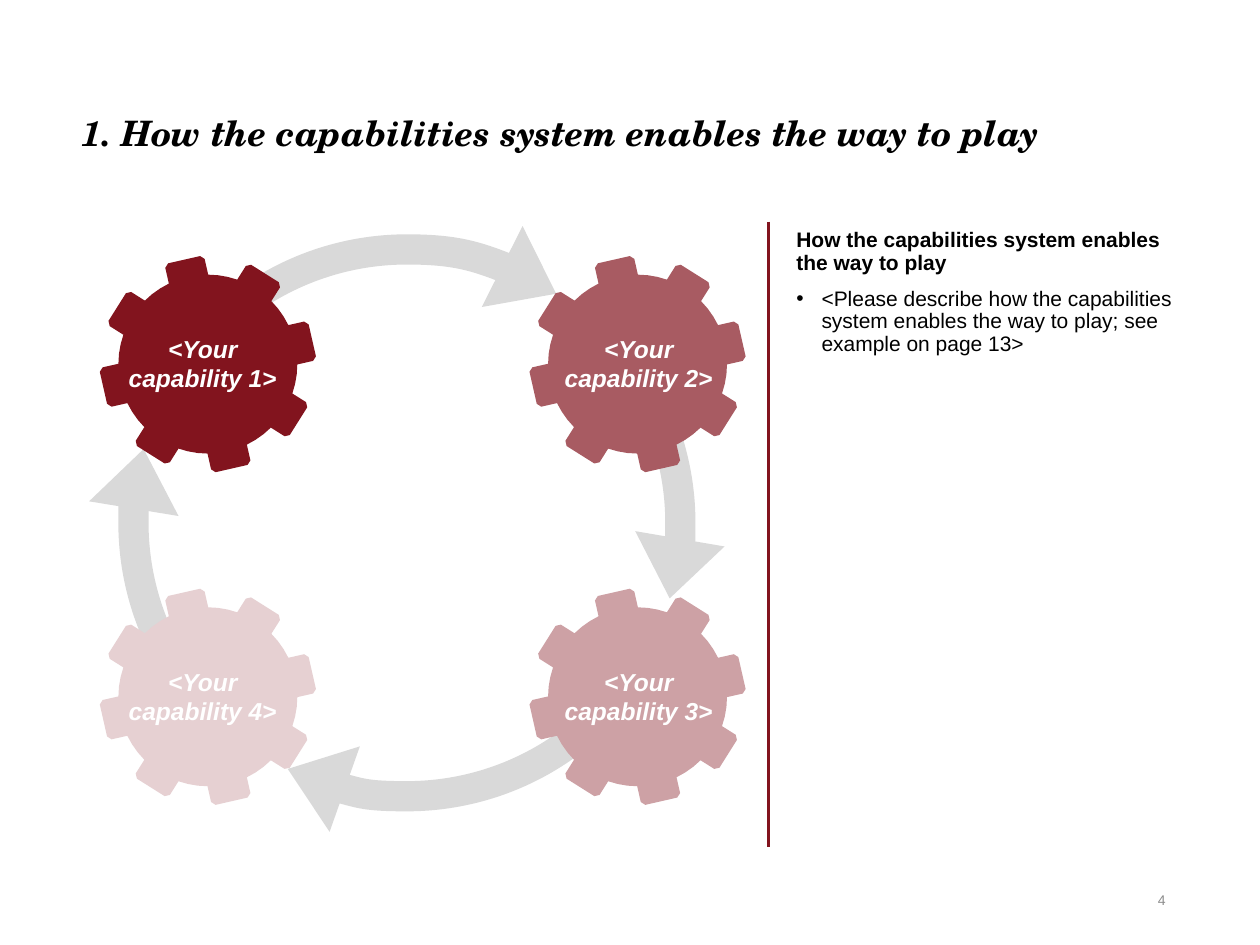
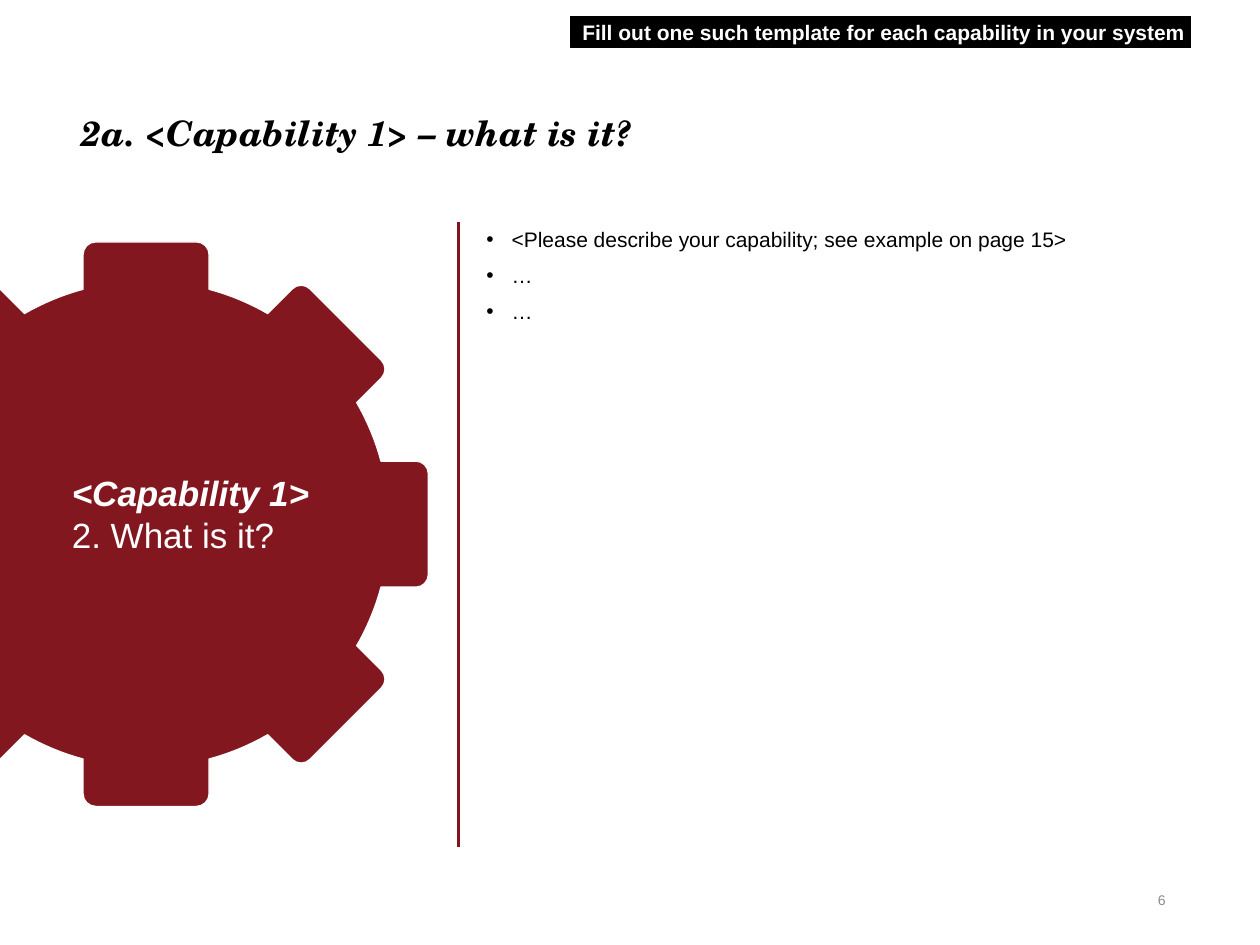
from math import asin, cos, pi, radians, sin, sqrt

from lxml.etree import SubElement
from pptx import Presentation
from pptx.dml.color import RGBColor
from pptx.enum.shapes import MSO_CONNECTOR, MSO_SHAPE
from pptx.enum.text import MSO_ANCHOR, PP_ALIGN
from pptx.oxml.ns import qn
from pptx.util import Inches, Pt

# Shared look
WIDTH, HEIGHT = 10, 7.5
MAROON, BIG_MAROON, ARROW_GREY = "82141E", "82171F", "D9D9D9"
BLACK, WHITE, NUMBER_GREY = "000000", "FFFFFF", "8C8C8C"
BODY_FONT, TITLE_FONT = "Arial", "TeX Gyre Schola"
MARGIN, RIGHT_EDGE = 0.65, 9.35
BODY_TOP, BODY_HEIGHT = 1.74, 4.92
RULE_TOP, RULE_BOTTOM = 1.76, 6.72

# Content: each paragraph is a text and its own format
SYSTEM = {
    "title": "1. How the capabilities system enables the way to play",
    "number": "4",
    "rule": 6.1,
    "body": [
        ("How the capabilities system enables the way to play", {"bold": True}),
        ("<Please describe how the capabilities system enables the way to play; "
         "see example on page 13>", {"bullet": True}),
    ],
}
CAPABILITY = {
    "title": "2a. <Capability 1> – what is it?",
    "number": "6",
    "rule": 3.64,
    "body": [
        ("<Please describe your capability; see example on page 15>", {"bullet": True}),
        ("…", {"bullet": True}),
        ("…", {"bullet": True}),
    ],
}
BANNER = "Fill out one such template for each capability in your system"
GEAR_HEADING = [("<Capability 1>", {"bold": True, "italic": True}),
                ("2. What is it?", {})]

# Gears on a two by two grid: label, colour, column, row
GEARS = [
    ("<Your capability 1>", MAROON, 0, 0),
    ("<Your capability 2>", "A85B62", 1, 0),
    ("<Your capability 3>", "CDA1A5", 1, 1),
    ("<Your capability 4>", "E6D0D2", 0, 1),
]
GEAR_COLUMNS, GEAR_ROWS, LABEL_COLUMNS = (1.65, 5.06), (2.89, 5.53), (1.61, 5.07)
SMALL_GEAR = {"body": 0.71, "outer": 0.85, "half_tooth": 0.16, "corner": 0.03,
              "corner_parts": 1, "rim_parts": 3, "turn": -12.8}
BIG_GEAR = {"body": 1.93, "outer": 2.24, "half_tooth": 0.5, "corner": 0.1,
            "corner_parts": 4, "rim_parts": 8}

# Cycle arrows: start and end in degrees, clockwise from the right
CYCLE_BOX = (1.06, 1.98, 4.34, 4.34)
CYCLE_ARROWS = [(335.76, 16.04), (151.55, 195.65), (51.7, 115.83), (231.7, 303.08)]


def colour(code):
    return RGBColor.from_string(code)


def inches(values):
    return [Inches(value) for value in values]


def add_bullet(para):
    properties = para._p.get_or_add_pPr()
    properties.set("marL", str(Inches(0.2)))
    properties.set("indent", str(-Inches(0.2)))
    SubElement(properties, qn("a:buFont"), typeface=BODY_FONT)
    SubElement(properties, qn("a:buChar"), char="•")


def add_text(slide, box, paragraphs, size=12, font=BODY_FONT, ink=BLACK, bold=False,
             italic=False, align=PP_ALIGN.LEFT, anchor=MSO_ANCHOR.TOP,
             insets=(0, 0, 0, 0), spacing=None, before=0, fill=None):
    """Write paragraphs in a text box, or in a rectangle when a fill is given."""
    if fill:
        shape = slide.shapes.add_shape(MSO_SHAPE.RECTANGLE, *inches(box))
        paint(shape, fill, fill)
    else:
        shape = slide.shapes.add_textbox(*inches(box))
    frame = shape.text_frame
    frame.word_wrap = True
    frame.vertical_anchor = anchor
    (frame.margin_left, frame.margin_top,
     frame.margin_right, frame.margin_bottom) = inches(insets)
    if isinstance(paragraphs, str):
        paragraphs = [(paragraphs, {})]
    for index, (text, own) in enumerate(paragraphs):
        para = frame.add_paragraph() if index else frame.paragraphs[0]
        para.alignment = align
        if spacing:
            para.line_spacing = spacing
        if index and before:
            para.space_before = Pt(before)
        if own.get("bullet"):
            add_bullet(para)
        span = para.add_run()
        span.text = text
        span.font.name, span.font.size = font, Pt(size)
        span.font.bold = own.get("bold", bold)
        span.font.italic = own.get("italic", italic)
        span.font.color.rgb = colour(ink)


def paint(shape, fill, edge=None):
    shape.shadow.inherit = False
    shape.fill.solid()
    shape.fill.fore_color.rgb = colour(fill)
    if edge:
        shape.line.color.rgb = colour(edge)
        shape.line.width = Pt(0.75)
    else:
        shape.line.fill.background()


def gear_outline(center_x, center_y, body, outer, half_tooth, corner,
                 corner_parts, rim_parts, turn=0, teeth=8):
    """Outline points of a gear with straight teeth and softened corners."""
    step = 2 * pi / teeth
    base = sqrt(body ** 2 - half_tooth ** 2)
    tooth_angle = asin(half_tooth / body)
    gap = step - 2 * tooth_angle
    quarter = [pi / 2 * part / corner_parts for part in range(corner_parts + 1)]
    # One tooth pointing right, then the stretch of rim up to the next tooth
    upper = [(outer - corner + corner * sin(angle), -half_tooth + corner - corner * cos(angle))
             for angle in quarter]
    lower = [(x, -y) for x, y in reversed(upper)]
    rim = [tooth_angle + gap * part / rim_parts for part in range(1, rim_parts)]
    sector = ([(base, -half_tooth)] + upper + lower + [(base, half_tooth)]
              + [(body * cos(angle), body * sin(angle)) for angle in rim])
    points = []
    for tooth in range(teeth):
        angle = radians(turn) + tooth * step
        points += [(center_x + x * cos(angle) - y * sin(angle),
                    center_y + x * sin(angle) + y * cos(angle)) for x, y in sector]
    return points


def add_gear(slide, center, fill, gear, edge=None, left_limit=-0.04):
    """Draw a gear, cut off at the left limit."""
    points = []
    for x, y in gear_outline(*center, **gear):
        cut = x < left_limit
        # Of a run of cut points only the outermost ones shape the edge
        points.append(inches((left_limit if cut else x, y)))
    builder = slide.shapes.build_freeform(*points[0])
    builder.add_line_segments(points[1:], close=True)
    paint(builder.convert_to_shape(), fill, edge)


def add_cycle_arrow(slide, start, end):
    arc = slide.shapes.add_shape(MSO_SHAPE.ARC, *inches(CYCLE_BOX))
    arc.adjustments[0], arc.adjustments[1] = start * 0.6, end * 0.6
    arc.shadow.inherit = False
    arc.fill.background()
    arc.line.color.rgb = colour(ARROW_GREY)
    arc.line.width = Pt(17.25)
    SubElement(arc.line._get_or_add_ln(), qn("a:tailEnd"), type="triangle", len="sm")


def add_page(deck, content):
    """Title, vertical rule, body text and page number of every slide."""
    slide = deck.slides.add_slide(deck.slide_layouts[6])
    add_text(slide, (MARGIN, 0.9, RIGHT_EDGE - MARGIN, 0.32), content["title"], size=20,
             font=TITLE_FONT, bold=True, italic=True, spacing=Pt(23))
    x = content["rule"]
    rule = slide.shapes.add_connector(MSO_CONNECTOR.STRAIGHT,
                                      *inches((x, RULE_TOP, x, RULE_BOTTOM)))
    rule.line.color.rgb = colour(MAROON)
    rule.line.width = Pt(1.5)
    SubElement(rule._element.spPr, qn("a:effectLst"))
    left = x + 0.1
    add_text(slide, (left, BODY_TOP, RIGHT_EDGE - left, BODY_HEIGHT), content["body"],
             insets=(0.12, 0.08, 0.02, 0), spacing=0.9, before=7.7)
    add_text(slide, (8.76, 6.99, 0.59, 0.31), content["number"], size=8, ink=NUMBER_GREY,
             align=PP_ALIGN.RIGHT, anchor=MSO_ANCHOR.MIDDLE, insets=(0.1, 0.05, 0.1, 0.05))
    return slide


def build_system(deck):
    slide = add_page(deck, SYSTEM)
    for start, end in CYCLE_ARROWS:
        add_cycle_arrow(slide, start, end)
    for label, fill, column, row in GEARS:
        center_y = GEAR_ROWS[row]
        add_gear(slide, (GEAR_COLUMNS[column], center_y), fill, SMALL_GEAR)
        add_text(slide, (LABEL_COLUMNS[column] - 0.63, center_y - 0.24, 1.26, 0.47), label,
                 size=14, ink=WHITE, bold=True, italic=True,
                 align=PP_ALIGN.CENTER, anchor=MSO_ANCHOR.MIDDLE)


def build_capability(deck):
    slide = add_page(deck, CAPABILITY)
    add_gear(slide, (1.16, 4.16), BIG_MAROON, BIG_GEAR, edge=WHITE)
    add_text(slide, (0.57, 3.74, 1.93, 0.67), GEAR_HEADING, size=20, ink=WHITE,
             anchor=MSO_ANCHOR.MIDDLE)
    add_text(slide, (4.53, 0.13, 4.92, 0.25), BANNER, ink=WHITE, bold=True, fill=BLACK,
             align=PP_ALIGN.RIGHT, anchor=MSO_ANCHOR.MIDDLE, insets=(0.04, 0.02, 0.04, 0.02))


def main():
    deck = Presentation()
    deck.slide_width, deck.slide_height = inches((WIDTH, HEIGHT))
    build_system(deck)
    build_capability(deck)
    deck.save("out.pptx")


if __name__ == "__main__":
    main()
